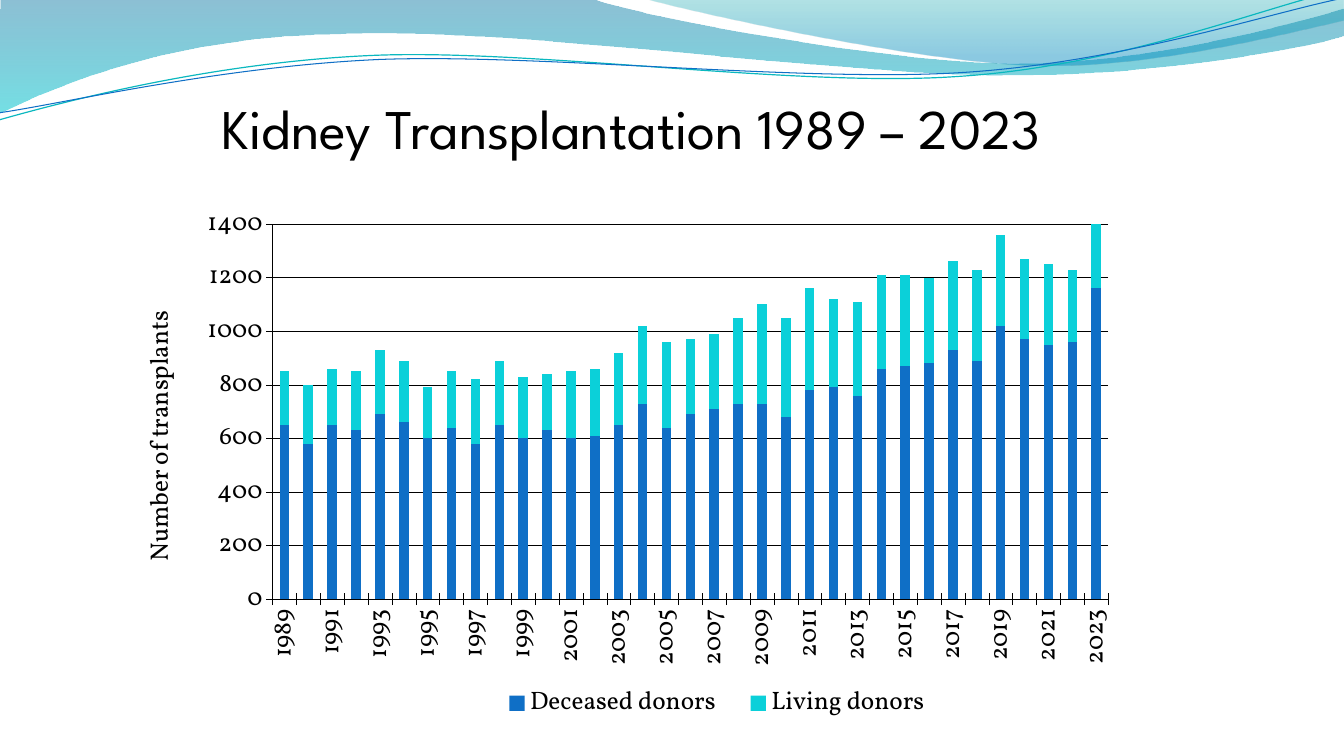
from math import cos, radians, sin

from lxml.etree import SubElement
from pptx import Presentation
from pptx.chart.data import CategoryChartData
from pptx.dml.color import RGBColor
from pptx.enum.chart import XL_CHART_TYPE, XL_LEGEND_POSITION, XL_TICK_LABEL_POSITION, XL_TICK_MARK
from pptx.enum.text import MSO_ANCHOR
from pptx.oxml import parse_xml
from pptx.oxml.ns import nsdecls, qn
from pptx.util import Pt

COLORS = {"text": "000000", "deceased": "0F6FC6", "living": "0BD0D9", "teal_line": "0AB8BF",
          "wave_top": "0074A1", "wave_bottom": "00C6CF",
          "crest_top": "00A1A9", "crest_bottom": "008BBF"}

# Each outline is a start point and segments: one point is a line, three are a cubic curve.
WAVE = ((0, 0), [
    [(422.6, -0.7)],
    [(456.5, 12.2), (636.5, 45.4), (727.9, 45.4)],
    [(818.6, 45.4), (919.4, 18.7), (959.8, 6.5)],
    [(960.5, 25.9)],
    [(943.9, 31.7), (834.5, 54.7), (715.7, 54)],
    [(596.9, 54), (366.5, 20.2), (247, 24.5)],
    [(123.1, 25.9), (43.9, 59.8), (-1.4, 81.4)],
    [(0, 0)]])
CREST = ((459.4, -0.7), [
    [(488.9, 7.9), (654.5, 44.6), (738, 46.8)],
    [(820.8, 49.7), (923, 23), (959.8, 15.1)],
    [(959.8, 0)],
    [(459.4, -0.7)]])
TEAL_LINE = ((-0.7, 85.7), [
    [(45.4, 72.7), (151.2, 44.6), (265.7, 39.6)],
    [(379.4, 34.6), (568.1, 62.6), (683.3, 54.7)],
    [(799.2, 47.5), (900.7, 5.8), (957.6, -7.2)]])
BLUE_LINE = ((-0.7, 80.6), [
    [(44.6, 74.2), (157, 47.5), (271.4, 42.5)],
    [(386.6, 38.2), (573.1, 59), (687.6, 51.8)],
    [(802.1, 44.6), (903.6, 10.1), (959.8, -1.4)]])
LINE_TILT = 357.3

YEARS = [str(year) for year in range(1989, 2024)]
DONORS = {
    "Deceased donors": ("deceased", [
        650, 580, 650, 630, 690, 660, 600, 640, 580, 650, 600, 630, 600, 610, 650, 730, 640, 690,
        710, 730, 730, 680, 780, 790, 760, 860, 870, 880, 930, 890, 1020, 970, 950, 960, 1160]),
    "Living donors": ("living", [
        200, 220, 210, 220, 240, 230, 190, 210, 240, 240, 230, 210, 250, 250, 270, 290, 320, 280,
        280, 320, 370, 370, 380, 330, 350, 350, 340, 320, 330, 340, 340, 300, 300, 270, 280])}
CHART_WIDTH, CHART_HEIGHT = 778.3, 386.6


def color(name):
    return RGBColor.from_string(COLORS[name])


def turn(point, center, degrees):
    """Turn a point clockwise about a center."""
    angle = radians(degrees)
    x, y = point[0] - center[0], point[1] - center[1]
    return (center[0] + x * cos(angle) - y * sin(angle),
            center[1] + x * sin(angle) + y * cos(angle))


def place(element, left, top, width=None, height=None, inner=False):
    """Give a chart part a manual layout, in points from the chart's corner."""
    for old in element.findall(qn("c:layout")):
        element.remove(old)
    layout = parse_xml(f'<c:layout {nsdecls("c")}/>')
    manual = SubElement(layout, qn("c:manualLayout"))
    if inner:
        SubElement(manual, qn("c:layoutTarget")).set("val", "inner")
    for name in ("xMode", "yMode"):
        SubElement(manual, qn(f"c:{name}")).set("val", "edge")
    for name, value, whole in (("x", left, CHART_WIDTH), ("y", top, CHART_HEIGHT),
                               ("w", width, CHART_WIDTH), ("h", height, CHART_HEIGHT)):
        if value is not None:
            SubElement(manual, qn(f"c:{name}")).set("val", f"{value / whole:.4f}")
    before = [child for child in element if child.tag in (qn("c:tx"), qn("c:legendPos"))]
    element.insert(len(before), layout)


class SlideBuilder:
    title_font = "League Spartan"
    chart_font = "Vollkorn"

    def __init__(self, slide):
        self.slide = slide

    def style_font(self, font, name, size):
        font.name, font.size, font.bold = name, Pt(size), False
        font.color.rgb = color("text")

    def add_outline(self, outline, closed, tilt=0):
        start, segments = outline
        points = [start] + [point for segment in segments for point in segment]
        center = [(min(axis) + max(axis)) / 2 for axis in zip(*points)]
        # Hundredths of a point keep the curves exact.
        (x, y), *points = [[round(value * 100) for value in turn(point, center, -tilt)]
                           for point in points]
        builder = self.slide.shapes.build_freeform(x, y, scale=Pt(1) / 100)
        builder.add_line_segments(points, close=closed)
        shape = builder.convert_to_shape()
        shape.shadow.inherit = False
        shape.rotation = tilt
        lines = iter(list(shape.element.iter(qn("a:lnTo"))))
        for segment in segments:
            steps = [next(lines) for _ in segment]
            if len(steps) == 3:
                curve = parse_xml(f'<a:cubicBezTo {nsdecls("a")}/>')
                steps[0].addprevious(curve)
                for step in steps:
                    curve.append(step[0])
                    step.getparent().remove(step)
        return shape

    def add_band(self, outline, stops):
        """Add a closed shape with a downward gradient; stops are position, colour, opacity."""
        shape = self.add_outline(outline, closed=True)
        shape.line.fill.background()
        stop_xml = "".join(
            f'<a:gs pos="{position * 1000}"><a:srgbClr val="{COLORS[name]}">'
            f'<a:alpha val="{opacity * 1000}"/></a:srgbClr></a:gs>'
            for position, name, opacity in stops)
        gradient = parse_xml(f'<a:gradFill {nsdecls("a")} rotWithShape="1"><a:gsLst>{stop_xml}'
                             '</a:gsLst><a:lin ang="5400000" scaled="0"/></a:gradFill>')
        shape.element.spPr.find(qn("a:custGeom")).addnext(gradient)

    def add_curve(self, outline, color_name, width):
        shape = self.add_outline(outline, closed=False, tilt=LINE_TILT)
        shape.fill.background()
        shape.line.color.rgb = color(color_name)
        shape.line.width = Pt(width)

    def add_title(self, text, left, top, width, height):
        frame = self.slide.shapes.add_textbox(Pt(left), Pt(top), Pt(width), Pt(height)).text_frame
        frame.word_wrap = True
        frame.vertical_anchor = MSO_ANCHOR.TOP
        paragraph = frame.paragraphs[0]
        paragraph.line_spacing = 0.8
        run = paragraph.add_run()
        run.text = text
        self.style_font(run.font, self.title_font, 40)

    def style_line(self, line):
        line.color.rgb = color("text")
        line.width = Pt(0.25)

    def style_axis(self, axis):
        axis.major_tick_mark = XL_TICK_MARK.CROSS
        axis.minor_tick_mark = XL_TICK_MARK.NONE
        self.style_line(axis.format.line)
        self.style_font(axis.tick_labels.font, self.chart_font, 18)

    def add_donor_chart(self, left, top):
        data = CategoryChartData()
        data.categories = YEARS
        for name, (_, values) in DONORS.items():
            data.add_series(name, values)
        chart = self.slide.shapes.add_chart(XL_CHART_TYPE.COLUMN_STACKED, Pt(left), Pt(top),
                                            Pt(CHART_WIDTH), Pt(CHART_HEIGHT), data).chart
        chart.has_title = False
        self.style_font(chart.font, self.chart_font, 18)
        plot = chart.plots[0]
        plot.gap_width, plot.overlap, plot.vary_by_categories = 150, 100, False
        for series, (color_name, _) in zip(plot.series, DONORS.values()):
            series.format.fill.solid()
            series.format.fill.fore_color.rgb = color(color_name)

        years = chart.category_axis
        self.style_axis(years)
        years.tick_label_position = XL_TICK_LABEL_POSITION.LOW
        years._element.find(qn("c:txPr")).find(qn("a:bodyPr")).set("rot", "-5400000")
        skip = parse_xml(f'<c:tickLblSkip {nsdecls("c")} val="2"/>')
        years._element.find(qn("c:noMultiLvlLbl")).addprevious(skip)

        counts = chart.value_axis
        self.style_axis(counts)
        counts.minimum_scale, counts.maximum_scale, counts.major_unit = 0, 1400, 200
        counts.has_major_gridlines = True
        self.style_line(counts.major_gridlines.format.line)
        title = counts.axis_title
        run = title.text_frame.paragraphs[0].add_run()
        run.text = "Number of transplants"
        self.style_font(run.font, self.chart_font, 18)
        title.text_frame._txBody.find(qn("a:bodyPr")).set("rot", "-5400000")
        place(title._element, 21, 83.5)

        chart.has_legend = True
        chart.legend.position = XL_LEGEND_POSITION.BOTTOM
        chart.legend.include_in_layout = False
        self.style_font(chart.legend.font, self.chart_font, 18)
        place(chart.legend._element, 268.5, 353.5, 334.5, 27)
        place(chart._chartSpace.chart.plotArea, 118.3, 24.6, 597, 268.1, inner=True)


def main():
    presentation = Presentation()
    presentation.slide_width, presentation.slide_height = Pt(960), Pt(540)
    builder = SlideBuilder(presentation.slides.add_slide(presentation.slide_layouts[6]))
    builder.add_band(WAVE, [(0, "wave_top", 45), (100, "wave_bottom", 55)])
    builder.add_band(CREST, [(0, "crest_top", 30), (80, "crest_bottom", 45)])
    builder.add_curve(TEAL_LINE, "teal_line", 0.85)
    builder.add_curve(BLUE_LINE, "deceased", 0.75)
    builder.add_title("Kidney Transplantation 1989 – 2023", 151.2, 72.7, 722.9, 74.9)
    builder.add_donor_chart(76.3, 135.4)
    presentation.save("out.pptx")


if __name__ == "__main__":
    main()
